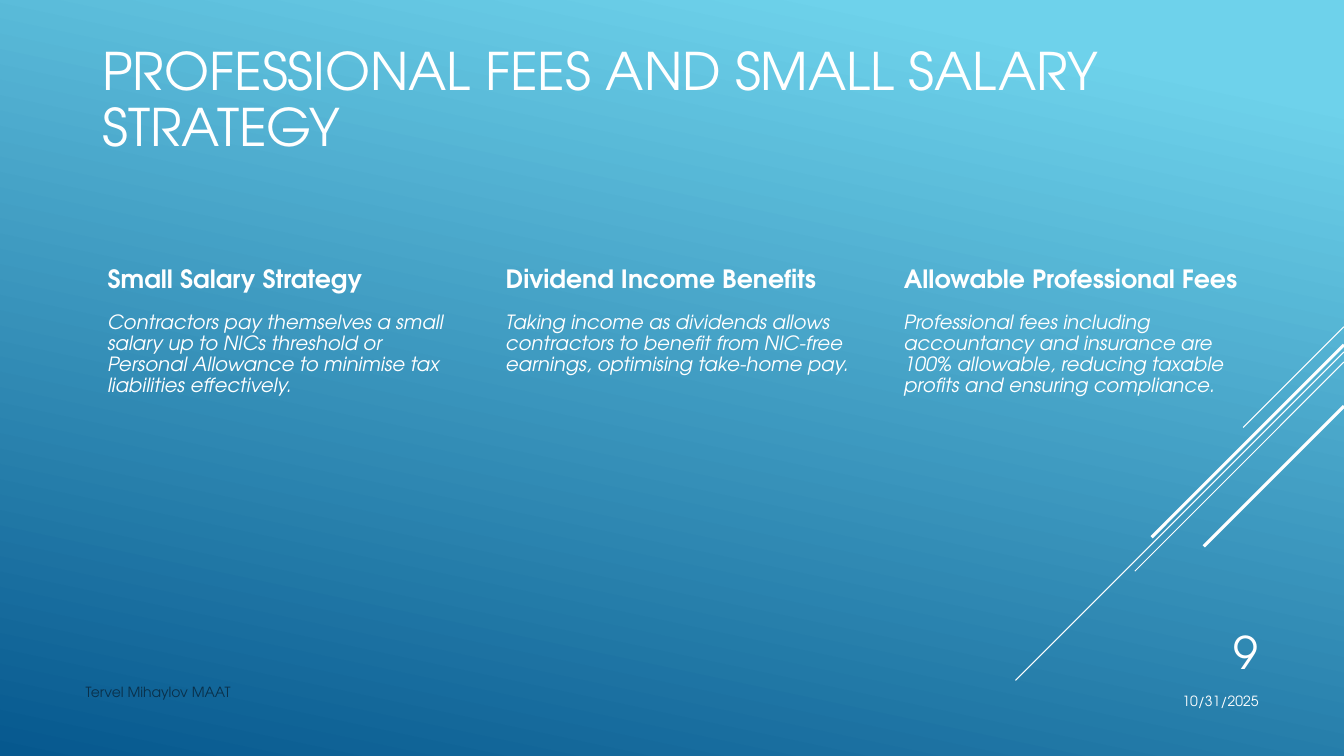
from dataclasses import dataclass

import pptx
import pptx.dml.color
import pptx.enum.shapes
import pptx.enum.text
import pptx.oxml
import pptx.oxml.ns
import pptx.presentation
import pptx.slide
import pptx.util

ANCHOR = pptx.enum.text.MSO_ANCHOR
ALIGN = pptx.enum.text.PP_ALIGN

# Grid of 160 columns by 90 rows; one cell is a twelfth of an inch
COLUMNS, ROWS = 160, 90
CELL = pptx.util.Inches(1) // 12


@dataclass(frozen=True)
class Theme:
    font: str = "TeX Gyre Adventor"
    text: str = "FFFFFF"
    author: str = "0A304A"
    sky: str = "6ED2EB"
    deep: str = "06588E"
    title_size: float = 37
    number_size: float = 32
    heading_size: float = 18
    body_size: float = 14
    footer_size: float = 10
    thin: float = 0.75
    thick: float = 2.25


@dataclass(frozen=True)
class Area:
    column: float
    row: float
    columns: float
    rows: float


@dataclass(frozen=True)
class Ray:
    """Diagonal that runs down and left from the slide's right edge."""
    row: float
    reach: float
    weight: float


@dataclass(frozen=True)
class Topic:
    heading: str
    body: str


THEME = Theme()

RAYS = [
    Ray(38.9, 12, THEME.thin),
    Ray(41.9, 39.1, THEME.thin),
    Ray(43.1, 24.9, THEME.thin),
    Ray(41.05, 22.9, THEME.thick),
    Ray(48.35, 16.7, THEME.thick),
]

TOPICS = [
    Topic("Small Salary Strategy",
          "Contractors pay themselves a small salary up to NICs threshold or "
          "Personal Allowance to minimise tax liabilities effectively."),
    Topic("Dividend Income Benefits",
          "Taking income as dividends allows contractors to benefit from "
          "NIC-free earnings, optimising take-home pay."),
    Topic("Allowable Professional Fees",
          "Professional fees including accountancy and insurance are 100% "
          "allowable, reducing taxable profits and ensuring compliance."),
]
TOPIC_LEFT, TOPIC_PITCH, TOPIC_WIDTH = 11, 47.4, 43.1
HEADING_ROW, HEADING_ROWS, BODY_ROWS = 31.45, 5.4, 48.4
TOPIC_INSETS = (1.8, 0.3, 0.3, 0.3)


def cells(count: float) -> int:
    return round(count * CELL)


def rgb(colour: str) -> pptx.dml.color.RGBColor:
    return pptx.dml.color.RGBColor.from_string(colour)


def paint_background(slide: pptx.slide.Slide) -> None:
    fill = slide.background.fill
    fill.gradient()
    fill.gradient_angle = 360 - 102
    stops = zip(fill.gradient_stops, ((0.1, THEME.sky), (1, THEME.deep)))
    for stop, (position, colour) in stops:
        stop.position = position
        stop.color.rgb = rgb(colour)


def draw_ray(slide: pptx.slide.Slide, ray: Ray) -> None:
    line = slide.shapes.add_connector(
        pptx.enum.shapes.MSO_CONNECTOR.STRAIGHT,
        cells(COLUMNS), cells(ray.row),
        cells(COLUMNS - ray.reach), cells(ray.row + ray.reach))
    line.line.color.rgb = rgb(THEME.text)
    line.line.width = pptx.util.Pt(ray.weight)
    properties = line._element.spPr
    properties.append(pptx.oxml.parse_xml(
        f"<a:effectLst {pptx.oxml.ns.nsdecls('a')}/>"))


def write(slide: pptx.slide.Slide, text: str, area: Area, *, size: float,
          colour: str = THEME.text, bold: bool = False, italic: bool = False,
          align: ALIGN = ALIGN.LEFT, anchor: ANCHOR = ANCHOR.TOP,
          insets: tuple[float, float, float, float] = (1.2, 0.6, 1.2, 0.6),
          spacing: float = 0.9) -> None:
    box = slide.shapes.add_textbox(cells(area.column), cells(area.row),
                                   cells(area.columns), cells(area.rows))
    frame = box.text_frame
    frame.word_wrap = True
    frame.vertical_anchor = anchor
    (frame.margin_left, frame.margin_top,
     frame.margin_right, frame.margin_bottom) = map(cells, insets)
    paragraph = frame.paragraphs[0]
    paragraph.alignment = align
    paragraph.line_spacing = spacing
    run = paragraph.add_run()
    run.text = text
    run.font.name = THEME.font
    run.font.size = pptx.util.Pt(size)
    run.font.bold = bold
    run.font.italic = italic
    run.font.color.rgb = rgb(colour)


def write_topic(slide: pptx.slide.Slide, index: int, topic: Topic) -> None:
    left = TOPIC_LEFT + index * TOPIC_PITCH
    write(slide, topic.heading,
          Area(left, HEADING_ROW, TOPIC_WIDTH, HEADING_ROWS),
          size=THEME.heading_size, bold=True, insets=TOPIC_INSETS)
    write(slide, topic.body,
          Area(left, HEADING_ROW + HEADING_ROWS, TOPIC_WIDTH, BODY_ROWS),
          size=THEME.body_size, italic=True, insets=TOPIC_INSETS)


def build() -> pptx.presentation.Presentation:
    deck = pptx.Presentation()
    deck.slide_width, deck.slide_height = cells(COLUMNS), cells(ROWS)
    slide = deck.slides.add_slide(deck.slide_layouts[6])

    # Backdrop
    paint_background(slide)
    for ray in RAYS:
        draw_ray(slide, ray)

    # Title and topics
    write(slide, "PROFESSIONAL FEES AND SMALL SALARY STRATEGY",
          Area(11, 4.8, 138, 14.6), size=THEME.title_size,
          anchor=ANCHOR.BOTTOM)
    for index, topic in enumerate(TOPICS):
        write_topic(slide, index, topic)

    # Footer
    write(slide, "Tervel Mihaylov MAAT", Area(9, 81, 99, 4.8),
          size=THEME.footer_size, colour=THEME.author, anchor=ANCHOR.MIDDLE,
          insets=(1.2, 0.6, 1.2, 2.6), spacing=1)
    write(slide, "10/31/2025", Area(130, 81, 21, 4.8),
          size=THEME.footer_size, align=ALIGN.RIGHT, anchor=ANCHOR.MIDDLE,
          spacing=1)
    write(slide, "9", Area(136, 73.2, 15, 8.8), size=THEME.number_size,
          align=ALIGN.RIGHT, anchor=ANCHOR.MIDDLE, spacing=1)
    return deck


if __name__ == "__main__":
    build().save("out.pptx")
